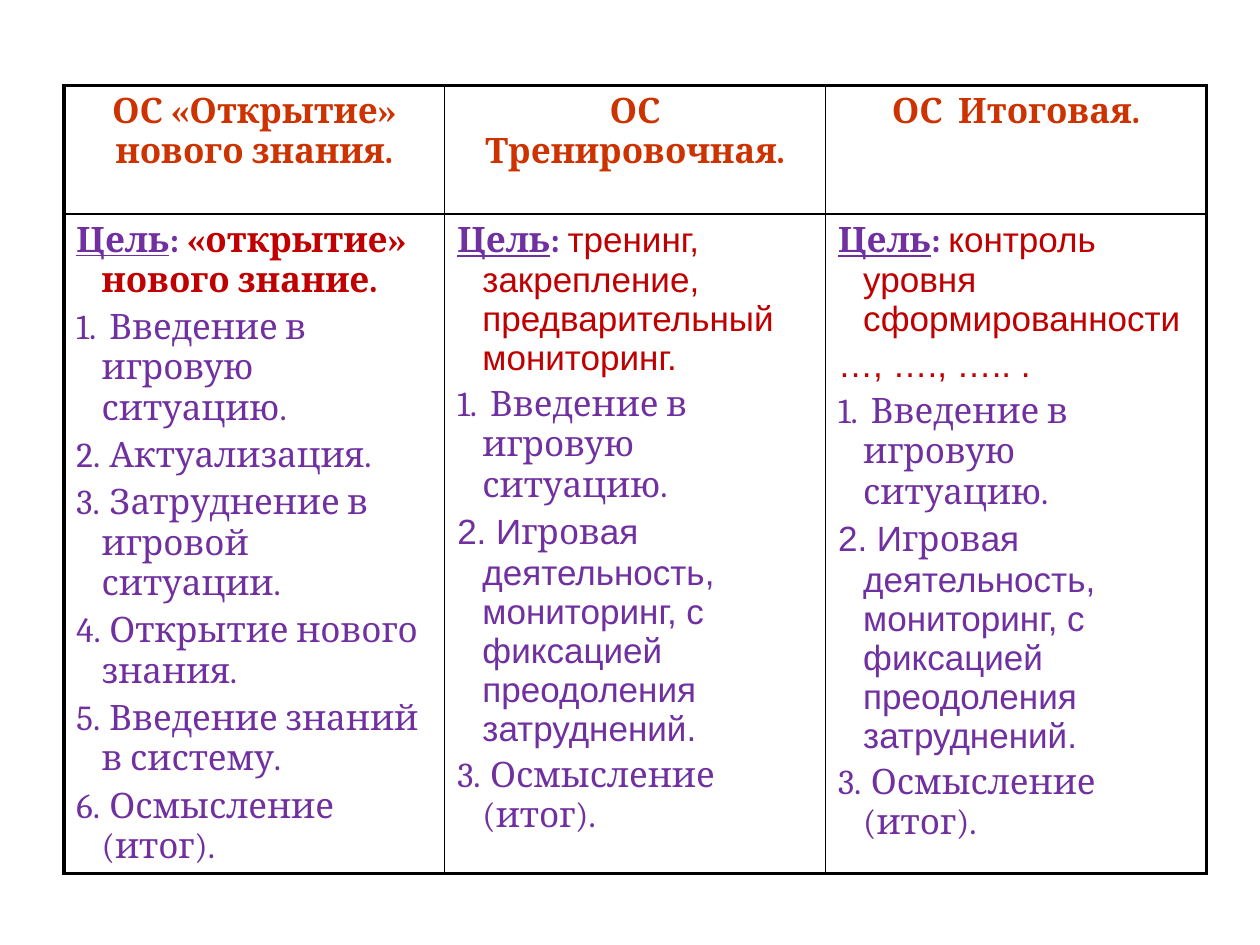
from lxml.etree import SubElement
from pptx import Presentation
from pptx.dml.color import RGBColor
from pptx.enum.text import PP_ALIGN
from pptx.oxml import parse_xml
from pptx.oxml.ns import nsdecls, qn
from pptx.util import Pt

# Styles: font, colour, bold, underline
HEADING = ("Cambria", "CC3300", True, False)
LABEL = ("Cambria", "7030A0", True, True)
COLON = ("Cambria", "7030A0", True, False)
STRONG_GOAL = ("Cambria", "C00000", True, False)
GOAL = ("Arial", "C00000", False, False)
STEP = ("Cambria", "7030A0", False, False)
STEP_SANS = ("Arial", "7030A0", False, False)

# Content: a paragraph is a list of (text, style) runs
HEADINGS = ["ОС «Открытие» нового знания.", "ОС Тренировочная.", "ОС  Итоговая."]
GOAL_LABEL = [("Цель", LABEL), (": ", COLON)]
INTRODUCTION = [(" Введение в игровую ситуацию.", STEP)]
SUMMARY = [(" Осмысление (итог).", STEP)]
PLAY_STEPS = [
    INTRODUCTION,
    [(" И", STEP_SANS), ("гров", STEP),
     ("ая деятельность, мониторинг, с фиксацией преодоления затруднений.", STEP_SANS)],
    SUMMARY,
]
DISCOVERY_STEPS = [
    INTRODUCTION,
    [(" Актуализация.", STEP)],
    [(" Затруднение в игровой ситуации.", STEP)],
    [(" Открытие нового знания.", STEP)],
    [(" Введение знаний в систему.", STEP)],
    SUMMARY,
]
# One (goal paragraphs, numbered steps) pair per column
BODIES = [
    ([GOAL_LABEL + [("«открытие» нового знание.", STRONG_GOAL)]], DISCOVERY_STEPS),
    ([GOAL_LABEL + [("тренинг, закрепление, предварительный мониторинг.", GOAL)]], PLAY_STEPS),
    ([GOAL_LABEL + [("контроль уровня сформированности", GOAL)],
      [("…, …., ….. .", GOAL)]], PLAY_STEPS),
]

LEFT, TOP = 36.5, 49
COLUMN_WIDTH = 217.6
ROW_HEIGHTS = [73.4, 362.2]
INDENT = 14.4
THIN, THICK = 1, 2.25


def color(value):
    return RGBColor.from_string(value)


def style_font(font, style):
    font.name, value, font.bold, font.underline = style
    font.color.rgb = color(value)


def write_paragraph(paragraph, runs, first, numbered=False, hanging=True):
    properties = paragraph._p.get_or_add_pPr()
    if hanging:
        properties.set("marL", str(Pt(INDENT)))
        properties.set("indent", str(-Pt(INDENT)))
    if numbered:
        SubElement(properties, qn("a:buAutoNum"), type="arabicPeriod")
    else:
        SubElement(properties, qn("a:buNone"))
    paragraph.font.size = Pt(20)
    if not first:
        paragraph.space_before = Pt(4)
    for text, style in runs:
        run = paragraph.add_run()
        run.text = text
        style_font(paragraph.font if len(runs) == 1 else run.font, style)


def set_borders(cell, widths):
    properties = cell._tc.get_or_add_tcPr()
    for position, (side, width) in enumerate(zip("LRTB", widths)):
        properties.insert(position, parse_xml(
            f'<a:ln{side} {nsdecls("a")} w="{Pt(width)}"><a:solidFill>'
            f'<a:srgbClr val="000000"/></a:solidFill></a:ln{side}>'))


presentation = Presentation()
presentation.slide_width, presentation.slide_height = Pt(720), Pt(540)
slide = presentation.slides.add_slide(presentation.slide_layouts[6])

# Table grid
column_count, row_count = len(HEADINGS), len(ROW_HEIGHTS)
table = slide.shapes.add_table(
    row_count, column_count, Pt(LEFT), Pt(TOP),
    Pt(COLUMN_WIDTH * column_count), Pt(sum(ROW_HEIGHTS))).table
table.first_row = table.horz_banding = False
for column in table.columns:
    column.width = Pt(COLUMN_WIDTH)
for row, height in zip(table.rows, ROW_HEIGHTS):
    row.height = Pt(height)

# Clear cells, thick outer frame and thin inner lines
for row in range(row_count):
    for column in range(column_count):
        cell = table.cell(row, column)
        cell.fill.background()
        outer = (column == 0, column == column_count - 1, row == 0, row == row_count - 1)
        set_borders(cell, [THICK if edge else THIN for edge in outer])

# Headings
for column, heading in enumerate(HEADINGS):
    paragraph = table.cell(0, column).text_frame.paragraphs[0]
    write_paragraph(paragraph, [(heading, HEADING)], first=True, hanging=False)
    paragraph.alignment = PP_ALIGN.CENTER

# Goals and numbered steps
for column, (goals, steps) in enumerate(BODIES):
    frame = table.cell(1, column).text_frame
    for index, runs in enumerate(goals + steps):
        paragraph = frame.add_paragraph() if index else frame.paragraphs[0]
        write_paragraph(paragraph, runs, first=index == 0, numbered=index >= len(goals))

presentation.save("out.pptx")
